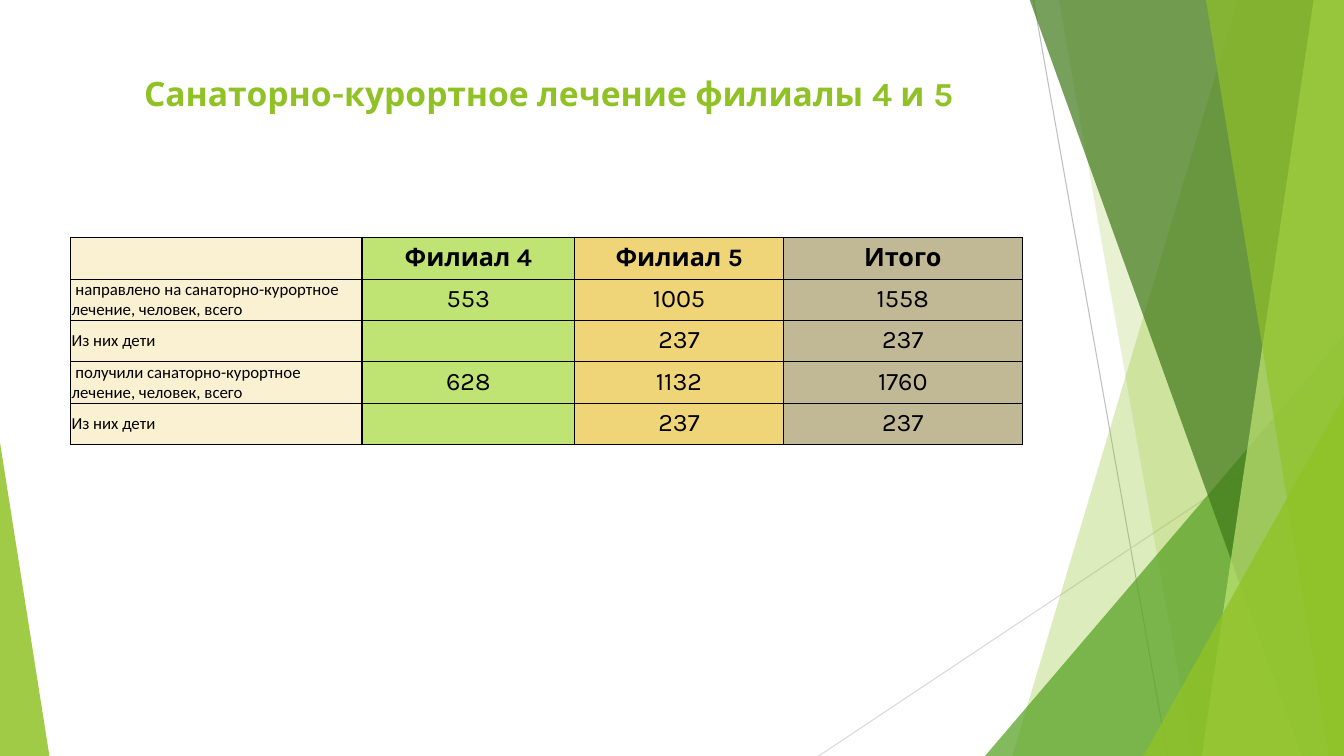
from dataclasses import dataclass

from lxml import etree
from pptx import Presentation, util as u
from pptx.dml.color import RGBColor
from pptx.enum import shapes, text
from pptx.oxml import parse_xml
from pptx.oxml.ns import nsdecls, qn

COLS, ROWS = 133.3, 75


@dataclass(frozen=True)
class Theme:
    """Colours, fonts and type sizes of the slide."""
    lime: str = "90C226"
    leaf: str = "54A021"
    moss: str = "3F7819"
    pale: str = "C0E474"
    ink: str = "000000"
    fills: tuple = ("FAF1D2", "C0E474", "F0D578", "C1B995")
    face: str = "Karla"
    label: str = "Calibri"
    head: int = 24
    body: int = 18
    small: int = 12


T = Theme()
TABLE = (
    ("", "Филиал 4", "Филиал 5", "Итого"),
    (" направлено на санаторно-курортное лечение, человек, всего", "553", "1005", "1558"),
    ("Из них дети", "", "237", "237"),
    (" получили санаторно-курортное лечение, человек, всего", "628", "1132", "1760"),
    ("Из них дети", "", "237", "237"),
)


def grid(n):
    """Return the length of n grid cells, ten to the inch."""
    return u.Inches(n / 10)


def put(item, **vals):
    """Set each named attribute on item."""
    for key, val in vals.items():
        setattr(item, key, val)


def tint(shape, color, alpha):
    """Fill a shape with a see-through colour and no line."""
    shape.shadow.inherit = False
    shape.line.fill.background()
    shape.fill.solid()
    shape.fill.fore_color.rgb = RGBColor.from_string(color)
    tone = shape.fill._xPr.find(".//" + qn("a:srgbClr"))
    etree.SubElement(tone, qn("a:alpha"), val=str(alpha * 1000))


def line(slide, ends, color):
    """Draw a thin straight line."""
    rule = slide.shapes.add_connector(
        shapes.MSO_CONNECTOR.STRAIGHT, *map(grid, ends))
    rule.line.color.rgb = RGBColor.from_string(color)
    rule.line.width = u.Pt(0.75)
    etree.SubElement(rule._element.spPr, qn("a:effectLst"))


def band(slide, top, foot, color, alpha):
    """Draw a slanted band that reaches the right edge."""
    pen = slide.shapes.build_freeform(grid(top), grid(-0.1), 1)
    ends = ((COLS, -0.1), (COLS, ROWS), (foot, ROWS))
    pen.add_line_segments([(grid(x), grid(y)) for x, y in ends], close=True)
    tint(pen.convert_to_shape(), color, alpha)


def wedge(slide, left, wide, high, apex, color, alpha):
    """Draw a triangle that stands on the bottom edge."""
    box = map(grid, (left, ROWS - high, wide, high))
    shape = slide.shapes.add_shape(shapes.MSO_SHAPE.ISOSCELES_TRIANGLE, *box)
    shape.adjustments[0] = apex
    tint(shape, color, alpha)


def write(para, words, face, size, color, bold=False, align=text.PP_ALIGN.CENTER):
    """Write one formatted run in a paragraph."""
    para.alignment = align
    run = para.add_run()
    run.text = words
    put(run.font, name=face, size=u.Pt(size), bold=bold)
    run.font.color.rgb = RGBColor.from_string(color)


def title(slide, words):
    """Add the slide heading."""
    box = slide.shapes.add_textbox(*map(grid, (7.4, 6.7, 94, 14.4)))
    put(box.text_frame, word_wrap=True, vertical_anchor=text.MSO_ANCHOR.TOP)
    write(box.text_frame.paragraphs[0], words, T.face, T.head, T.lime, True)


def edge(cell):
    """Draw the four borders of a cell."""
    for side in "LRTB":
        cell._tc.get_or_add_tcPr().append(parse_xml(
            f'<a:ln{side} {nsdecls("a")} w="{u.Pt(1)}"><a:solidFill>'
            f'<a:srgbClr val="{T.ink}"/></a:solidFill></a:ln{side}>'))


def fill(cell, words, row, col):
    """Format one table cell and write its words."""
    edge(cell)
    cell.fill.solid()
    cell.fill.fore_color.rgb = RGBColor.from_string(T.fills[col])
    para = cell.text_frame.paragraphs[0]
    side, rim = (0.8, 0.5)
    if col == 0 and row:
        side, rim = (0.1, 0)
        low = row % 2
        cell.vertical_anchor = text.MSO_ANCHOR.BOTTOM if low else text.MSO_ANCHOR.MIDDLE
        write(para, words, T.label, T.small, T.ink, align=text.PP_ALIGN.LEFT)
    elif words:
        write(para, words, T.face, T.body, T.ink, row == 0)
    put(cell, margin_left=grid(side), margin_right=grid(side),
        margin_top=grid(rim), margin_bottom=grid(rim))


def table(slide, data, wides, high):
    """Add the table of treatment figures."""
    box = map(grid, (7, 23.6, sum(wides), high * len(data)))
    tab = slide.shapes.add_table(len(data), len(wides), *box).table
    put(tab, first_row=False, horz_banding=False)
    for col, wide in zip(tab.columns, wides):
        col.width = grid(wide)
    for r, row in enumerate(data):
        tab.rows[r].height = grid(high)
        for c, words in enumerate(row):
            fill(tab.cell(r, c), words, r, c)


def decor(slide):
    """Draw the green bands and lines at the edges."""
    line(slide, (102.5, 0, 115.8, ROWS), "BFBFBF")
    line(slide, (COLS, 40.3, 81.2, ROWS), "D9D9D9")
    band(slide, 122.8, 100.4, T.lime, 30)
    band(slide, 105, 118.3, T.lime, 20)
    wedge(slide, 97.7, 35.6, 41.7, 1, T.leaf, 72)
    band(slide, 102.1, 129.1, T.moss, 70)
    band(slide, 130.3, 119.2, T.pale, 70)
    band(slide, 119.6, 131.8, T.lime, 65)
    wedge(slide, 113.4, 19.9, 35.7, 1, T.lime, 80)
    wedge(slide, 0, 4.9, 31.1, 0, T.lime, 85)


def main():
    """Build and save the slide."""
    deck = Presentation()
    put(deck, slide_width=grid(COLS), slide_height=grid(ROWS))
    slide = deck.slides.add_slide(deck.slide_layouts[6])
    decor(slide)
    title(slide, "Санаторно-курортное лечение филиалы 4 и 5")
    table(slide, TABLE, (28.9, 21.1, 20.7, 23.7), 4.1)
    deck.save("out.pptx")


if __name__ == "__main__":
    main()
